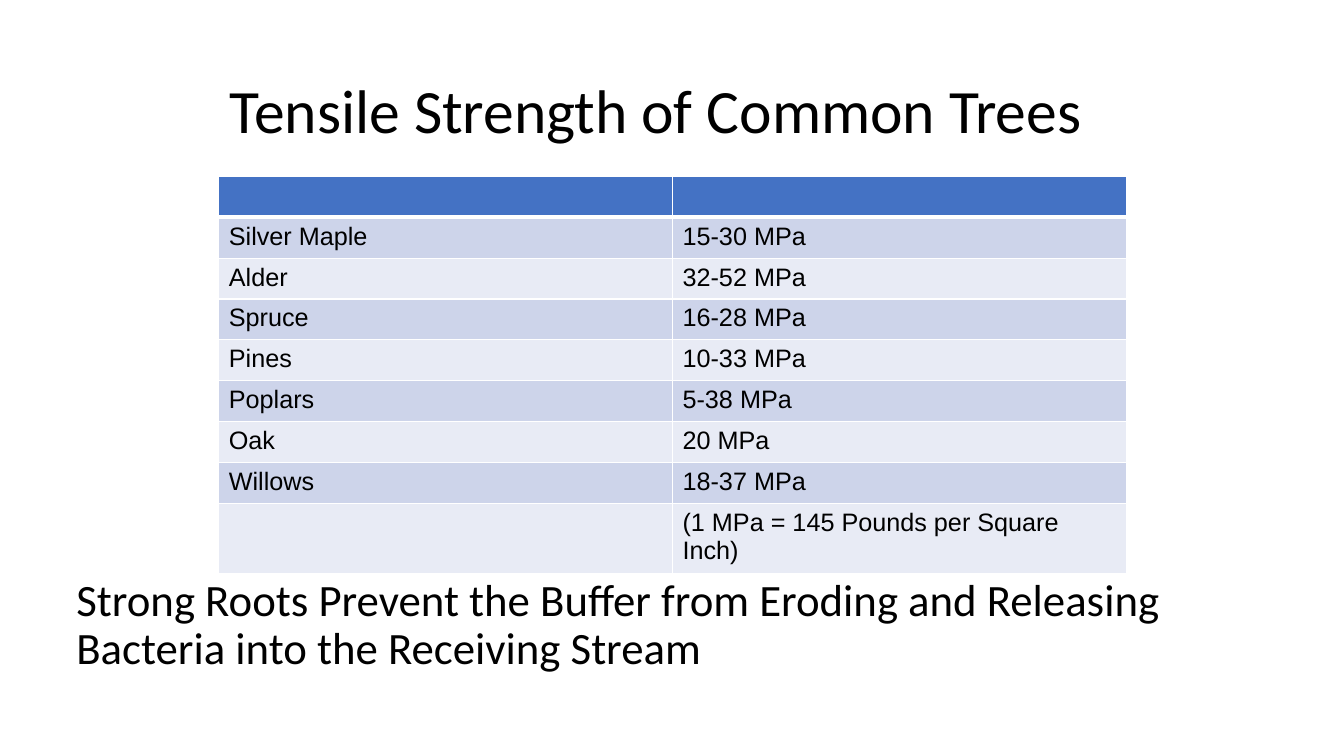
from lxml import etree
from pptx import Presentation
from pptx import util as u
from pptx.dml.color import RGBColor
from pptx.enum import text
from pptx.oxml import ns

COLORS = {
    "ink": "000000",
    "header": "4472C4",
    "odd_row": "CDD4EA",
    "even_row": "E8EBF5",
    "rule": "FFFFFF",
}

TREES = [
    ("Silver Maple", "15-30 MPa"),
    ("Alder", "32-52 MPa"),
    ("Spruce", "16-28 MPa"),
    ("Pines", "10-33 MPa"),
    ("Poplars", "5-38 MPa"),
    ("Oak", "20 MPa"),
    ("Willows", "18-37 MPa"),
    ("", "(1 MPa = 145 Pounds per Square Inch)"),
]


def add_span(para, words, font, size):
    span = para.add_run()
    span.text = words
    span.font.name = font
    span.font.size = u.Pt(size)
    span.font.color.rgb = RGBColor.from_string(COLORS["ink"])


def add_statement(page, box, words, size):
    """Place one left-aligned, vertically centred paragraph in the box."""
    frame = page.shapes.add_textbox(*map(u.Inches, box)).text_frame
    frame.word_wrap = True
    frame.vertical_anchor = text.MSO_ANCHOR.MIDDLE
    para = frame.paragraphs[0]
    para.line_spacing = 0.9
    add_span(para, words, "Calibri", size)


def set_borders(cell, widths):
    """Draw the cell's left, right, top and bottom rules, in points."""
    properties = cell._tc.get_or_add_tcPr()
    for index, (side, width) in enumerate(zip("LRTB", widths)):
        line = etree.Element(ns.qn(f"a:ln{side}"), w=str(u.Pt(width)))
        fill = etree.SubElement(line, ns.qn("a:solidFill"))
        etree.SubElement(fill, ns.qn("a:srgbClr"), val=COLORS["rule"])
        properties.insert(index, line)


def add_strength_table(page, box):
    """Fill the box with a blank header row and banded tree rows."""
    rows = [("", "")] + TREES
    table = page.shapes.add_table(len(rows), 2, *map(u.Inches, box)).table
    for column in table.columns:
        column.width = u.Inches(box[2] / 2)
    for r, row in enumerate(rows):
        table.rows[r].height = u.Inches(box[3] / len(rows))
        band = "header" if r == 0 else "odd_row" if r % 2 else "even_row"
        for c, words in enumerate(row):
            cell = table.cell(r, c)
            cell.fill.solid()
            cell.fill.fore_color.rgb = RGBColor.from_string(COLORS[band])
            set_borders(cell, (1, 1, 3 if r == 1 else 1, 3 if r == 0 else 1))
            if words:
                add_span(cell.text_frame.paragraphs[0], words, "Arial", 18)


def main():
    deck = Presentation()
    deck.slide_width, deck.slide_height = u.Inches(13.33), u.Inches(7.5)
    page = deck.slides.add_slide(deck.slide_layouts[6])

    # Title
    add_statement(page, (2.18, 0.4, 9.34, 1.45),
                  "Tensile Strength of Common Trees", 44)
    # Tree strengths
    add_strength_table(page, (2.17, 1.75, 9, 3.65))
    # Conclusion
    add_statement(page, (0.66, 5.57, 12.1, 1.28),
                  "Strong Roots Prevent the Buffer from Eroding and Releasing "
                  "Bacteria into the Receiving Stream", 32)

    deck.save("out.pptx")


if __name__ == "__main__":
    main()
